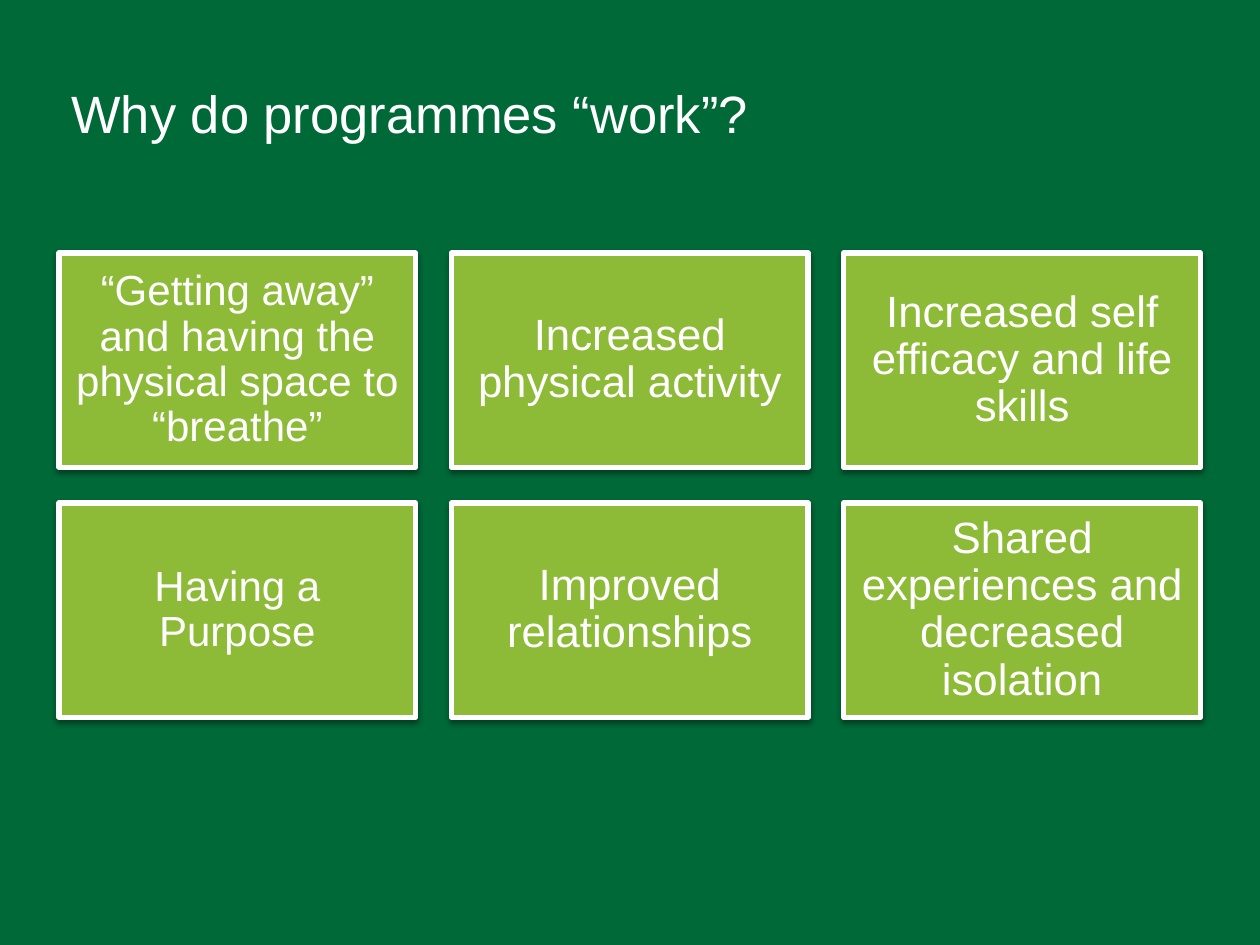
from lxml.etree import SubElement
from pptx import Presentation
from pptx.dml.color import RGBColor
from pptx.enum.shapes import MSO_SHAPE
from pptx.enum.text import MSO_ANCHOR, PP_ALIGN
from pptx.oxml.ns import qn
from pptx.util import Cm, Pt

DARK_GREEN = RGBColor(0x00, 0x69, 0x38)
LIME = RGBColor(0x8D, 0xBB, 0x37)
WHITE = RGBColor(0xFF, 0xFF, 0xFF)

LEFT, CARD_TOP = 1.19, 5.1
CARD_WIDTH, CARD_HEIGHT, GAP = 7.19, 4.32, 0.72
COLUMNS = 3
REASONS = [
    ("“Getting away” and having the physical space to “breathe”", 24),
    ("Increased physical activity", 25),
    ("Increased self efficacy and life skills", 25),
    ("Having a Purpose", 24),
    ("Improved relationships", 25),
    ("Shared experiences and decreased isolation", 25),
]


def apply_format(target, values):
    for name, value in values.items():
        setattr(target, name, value)


def write_text(box, text, size, frame_format, para_format):
    frame = box.text_frame
    apply_format(frame, {"word_wrap": True, **frame_format})
    para = frame.paragraphs[0]
    apply_format(para, para_format)
    span = para.add_run()
    span.text = text
    apply_format(span.font, {"name": "Arial", "size": Pt(size)})
    span.font.color.rgb = WHITE


def add_shadow(shape):
    shape.shadow.inherit = False
    effects = shape._element.spPr.find(qn("a:effectLst"))
    shadow = SubElement(effects, qn("a:outerShdw"), blurRad="40000",
                        dist="20000", dir="5400000", rotWithShape="0")
    color = SubElement(shadow, qn("a:srgbClr"), val="000000")
    SubElement(color, qn("a:alpha"), val="38000")


def add_title(page, text):
    box = page.shapes.add_textbox(Cm(LEFT), Cm(1.73), Cm(23.01), Cm(2.87))
    write_text(box, text, 30, {"vertical_anchor": MSO_ANCHOR.TOP},
               {"line_spacing": Pt(30)})


def add_card(page, index, text, size):
    row, column = divmod(index, COLUMNS)
    card = page.shapes.add_shape(
        MSO_SHAPE.RECTANGLE,
        Cm(LEFT + column * (CARD_WIDTH + GAP)),
        Cm(CARD_TOP + row * (CARD_HEIGHT + GAP)),
        Cm(CARD_WIDTH), Cm(CARD_HEIGHT))
    card.fill.solid()
    card.fill.fore_color.rgb = LIME
    card.line.color.rgb = WHITE
    card.line.width = Pt(3)
    add_shadow(card)
    margins = {f"margin_{side}": Cm(0.25)
               for side in ("left", "top", "right", "bottom")}
    write_text(card, text, size,
               {"vertical_anchor": MSO_ANCHOR.MIDDLE, **margins},
               {"alignment": PP_ALIGN.CENTER, "line_spacing": 0.9})


def main():
    deck = Presentation()
    apply_format(deck, {"slide_width": Cm(25.4), "slide_height": Cm(19.05)})
    page = deck.slides.add_slide(deck.slide_layouts[6])
    page.background.fill.solid()
    page.background.fill.fore_color.rgb = DARK_GREEN
    add_title(page, "Why do programmes “work”?")
    for index, (text, size) in enumerate(REASONS):
        add_card(page, index, text, size)
    deck.save("out.pptx")


if __name__ == "__main__":
    main()
